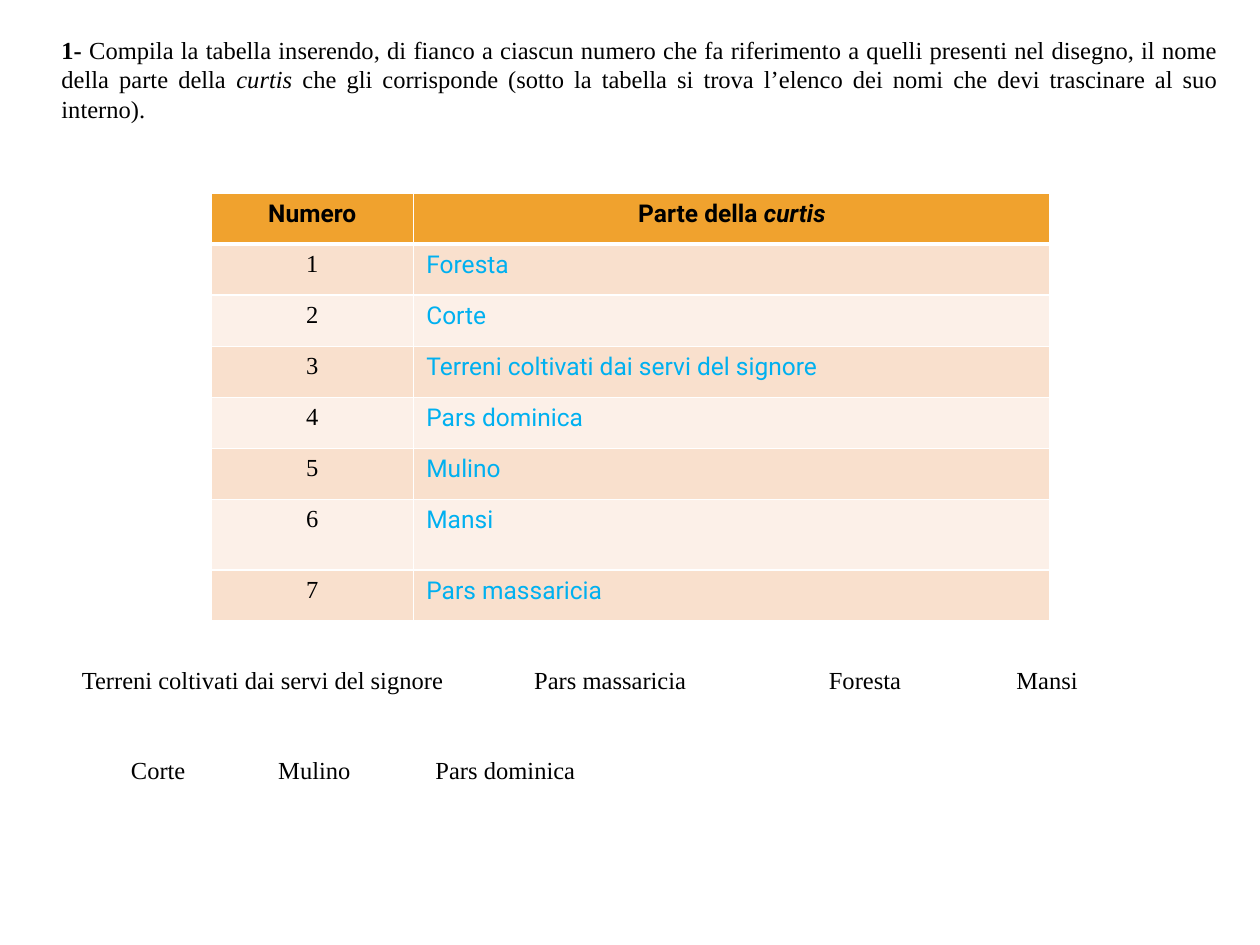
from lxml import etree
from pptx import Presentation
from pptx import util as u
from pptx.dml.color import RGBColor
from pptx.enum import text as t
from pptx.oxml.ns import qn

SERIF, SANS = "Times New Roman", "Roboto"


def style(par, face, hue, bold=False):
    par.font.name, par.font.size, par.font.bold = face, u.Pt(14), bold
    par.font.color.rgb = RGBColor.from_string(hue)


def edge(cell, widths):
    props = cell._tc.get_or_add_tcPr()
    for i, (side, width) in enumerate(zip("LRTB", widths)):
        line = etree.Element(qn(f"a:ln{side}"), w=str(u.Pt(width)))
        fill = etree.SubElement(line, qn("a:solidFill"))
        etree.SubElement(fill, qn("a:srgbClr"), val="FFFFFF")
        props.insert(i, line)


deck = Presentation()
deck.slide_width, deck.slide_height = u.Cm(25.4), u.Cm(19.05)
slide = deck.slides.add_slide(deck.slide_layouts[6])

# Table
parts = ["Foresta", "Corte", "Terreni coltivati dai servi del signore",
         "Pars dominica", "Mulino", "Mansi", "Pars massaricia"]
rows = [("Numero", "Parte della ")]
rows += [(str(n), part) for n, part in enumerate(parts, 1)]
grid = slide.shapes.add_table(len(rows), 2, u.Cm(4.25), u.Cm(3.89),
                              u.Cm(16.92), u.Cm(8.65)).table
grid.columns[0].width, grid.columns[1].width = u.Cm(4.09), u.Cm(12.83)
for r, row in enumerate(rows):
    grid.rows[r].height = u.Cm(1.42 if r == 6 else 1.03)
    back = "F0A22E" if r == 0 else ("FCF0E8", "F9E0CD")[r % 2]
    for c, word in enumerate(row):
        cell = grid.cell(r, c)
        cell.fill.solid()
        cell.fill.fore_color.rgb = RGBColor.from_string(back)
        edge(cell, (1, 1, 3 if r == 1 else 1, 3 if r == 0 else 1))
        par = cell.text_frame.paragraphs[0]
        par.add_run().text = word
        if r == 0 or c == 0:
            par.alignment = t.PP_ALIGN.CENTER
        style(par, SANS if r == 0 or c else SERIF,
              "00B0F0" if r and c else "000000", r == 0)
run = grid.cell(0, 1).text_frame.paragraphs[0].add_run()
run.text, run.font.italic = "curtis", True

# Instructions
box = slide.shapes.add_textbox(u.Cm(0.99), u.Cm(0.58), u.Cm(23.83), u.Cm(2.06))
box.text_frame.word_wrap = True
par = box.text_frame.paragraphs[0]
par.alignment = t.PP_ALIGN.JUSTIFY
style(par, SERIF, "000000")
for word, bold, slant in [
        ("1- ", True, False),
        ("Compila la tabella inserendo, di fianco a ciascun numero che fa "
         "riferimento a quelli presenti nel disegno, il nome della parte "
         "della ", False, False),
        ("curtis ", False, True),
        ("che gli corrisponde (sotto la tabella si trova l’elenco dei nomi "
         "che devi trascinare al suo interno).", False, False)]:
    run = par.add_run()
    run.text, run.font.bold, run.font.italic = word, bold, slant

# Names to drag into the table
names = {13.28: [(parts[2], 1.4, 8.03), (parts[6], 10.52, 3.61),
                 (parts[0], 16.46, 2.11), (parts[5], 20.24, 1.93)],
         15.09: [(parts[1], 2.39, 1.78), (parts[4], 5.36, 1.98),
                 (parts[3], 8.53, 3.35)]}
for top, line in names.items():
    for word, left, width in line:
        box = slide.shapes.add_textbox(u.Cm(left), u.Cm(top), u.Cm(width), u.Cm(0.86))
        box.text_frame.word_wrap = False
        box.text_frame.text = word
        style(box.text_frame.paragraphs[0], SERIF, "000000")

deck.save("out.pptx")
